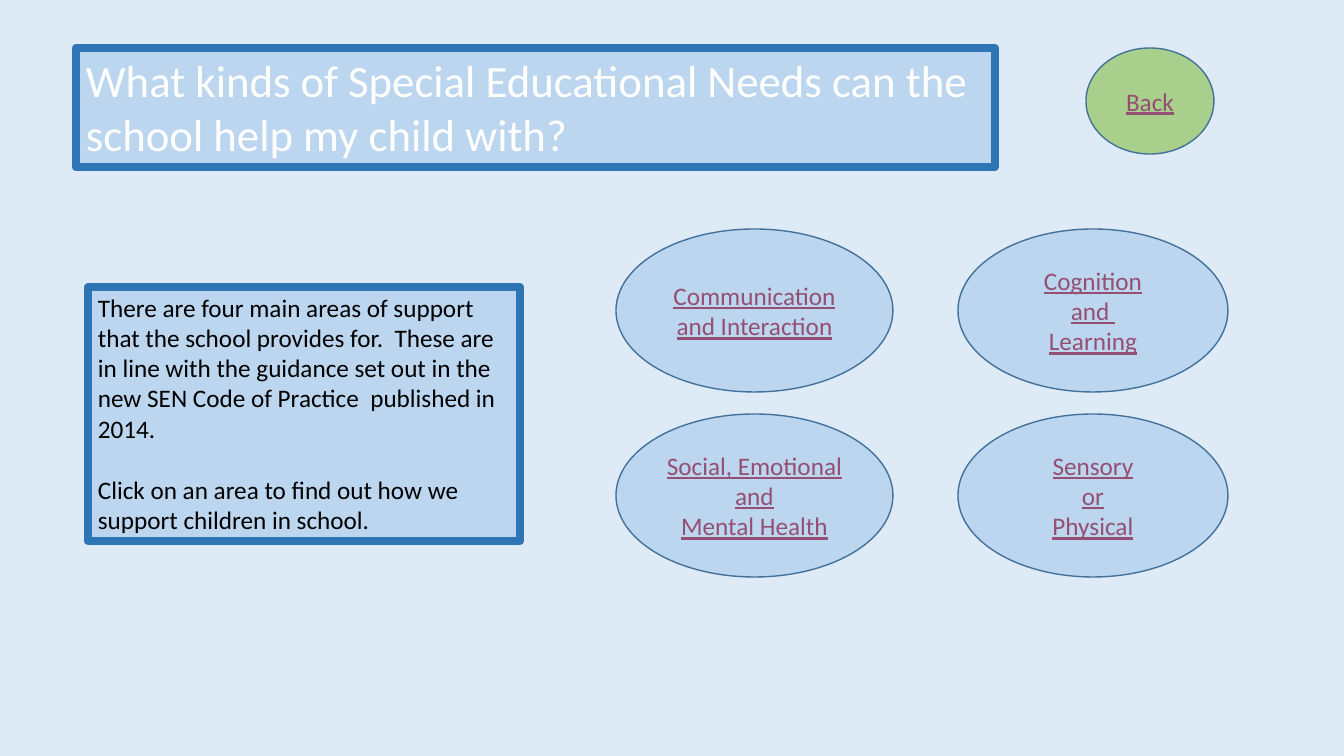
from dataclasses import dataclass

from pptx import Presentation
from pptx.dml.color import RGBColor
from pptx.enum.shapes import MSO_SHAPE as SHAPE
from pptx.enum.text import MSO_ANCHOR as ANCHOR, PP_ALIGN as ALIGN
from pptx.util import Emu, Pt

PX = 914400 / 100.8


@dataclass(frozen=True)
class Theme:
    font: str = "Calibri"
    background: str = "DEEBF7"
    panel: str = "BBD6EE"
    frame: str = "2E75B5"
    outline: str = "42719B"
    back: str = "A8D08C"
    link: str = "954F72"
    heading: str = "FFFFFF"
    body: str = "000000"
    heading_size: int = 32
    body_size: int = 18
    paragraph_gap: int = 22
    frame_width: int = 6
    outline_width: int = 1


class SlideBuilder:
    def __init__(self, prs, theme):
        self.theme = theme
        self.s = prs.slides.add_slide(prs.slide_layouts[6])
        fill = self.s.background.fill
        fill.solid()
        fill.fore_color.rgb = RGBColor.from_string(theme.background)

    def shape(self, kind, box, fill, line, line_width):
        sp = self.s.shapes.add_shape(kind, *(Emu(round(v * PX)) for v in box))
        sp.shadow.inherit = False
        sp.fill.solid()
        sp.fill.fore_color.rgb = RGBColor.from_string(fill)
        sp.line.color.rgb = RGBColor.from_string(line)
        sp.line.width = Pt(line_width)
        return sp

    def label(self, sp, text, size, color, align, anchor, underline=False, gap=0):
        tf = sp.text_frame
        tf.word_wrap = True
        tf.vertical_anchor = anchor
        tf.text = text
        for i, p in enumerate(tf.paragraphs):
            p.alignment = align
            if i and gap:
                p.space_before = Pt(gap)
            for r in p.runs:
                r.font.name = self.theme.font
                r.font.size = Pt(size)
                r.font.color.rgb = RGBColor.from_string(color)
                r.font.underline = underline

    def framed_box(self, box, text, size, color):
        t = self.theme
        sp = self.shape(SHAPE.RECTANGLE, box, t.panel, t.frame, t.frame_width)
        self.label(sp, text, size, color, ALIGN.LEFT, ANCHOR.TOP,
                   gap=t.paragraph_gap)

    def oval_button(self, box, text, fill):
        t = self.theme
        sp = self.shape(SHAPE.OVAL, box, fill, t.outline, t.outline_width)
        self.label(sp, text, t.body_size, t.link, ALIGN.CENTER, ANCHOR.MIDDLE,
                   underline=True)


def main():
    prs = Presentation()
    prs.slide_width, prs.slide_height = Emu(round(1344 * PX)), Emu(round(756 * PX))
    theme = Theme()
    slide = SlideBuilder(prs, theme)

    # Heading and introduction
    slide.framed_box(
        (76, 48, 919, 119),
        "What kinds of Special Educational Needs can the school help my child with?",
        theme.heading_size, theme.heading)
    slide.framed_box(
        (88, 287, 432, 254),
        "There are four main areas of support that the school provides for.  "
        "These are in line with the guidance set out in the new SEN Code of "
        "Practice  published in 2014.\n"
        "Click on an area to find out how we support children in school.",
        theme.body_size, theme.body)

    # Four areas of support, two by two
    columns = [(616, 277), (958, 270)]
    rows = [(229, 163), (414, 163)]
    areas = [
        ["Communication and Interaction", "Cognition\nand \nLearning"],
        ["Social, Emotional\nand\nMental Health", "Sensory\nor\nPhysical"],
    ]
    for (top, height), names in zip(rows, areas):
        for (left, width), name in zip(columns, names):
            slide.oval_button((left, top, width, height), name, theme.panel)

    # Back button
    slide.oval_button((1086, 48, 128, 106), "Back", theme.back)

    prs.save("out.pptx")


if __name__ == "__main__":
    main()
